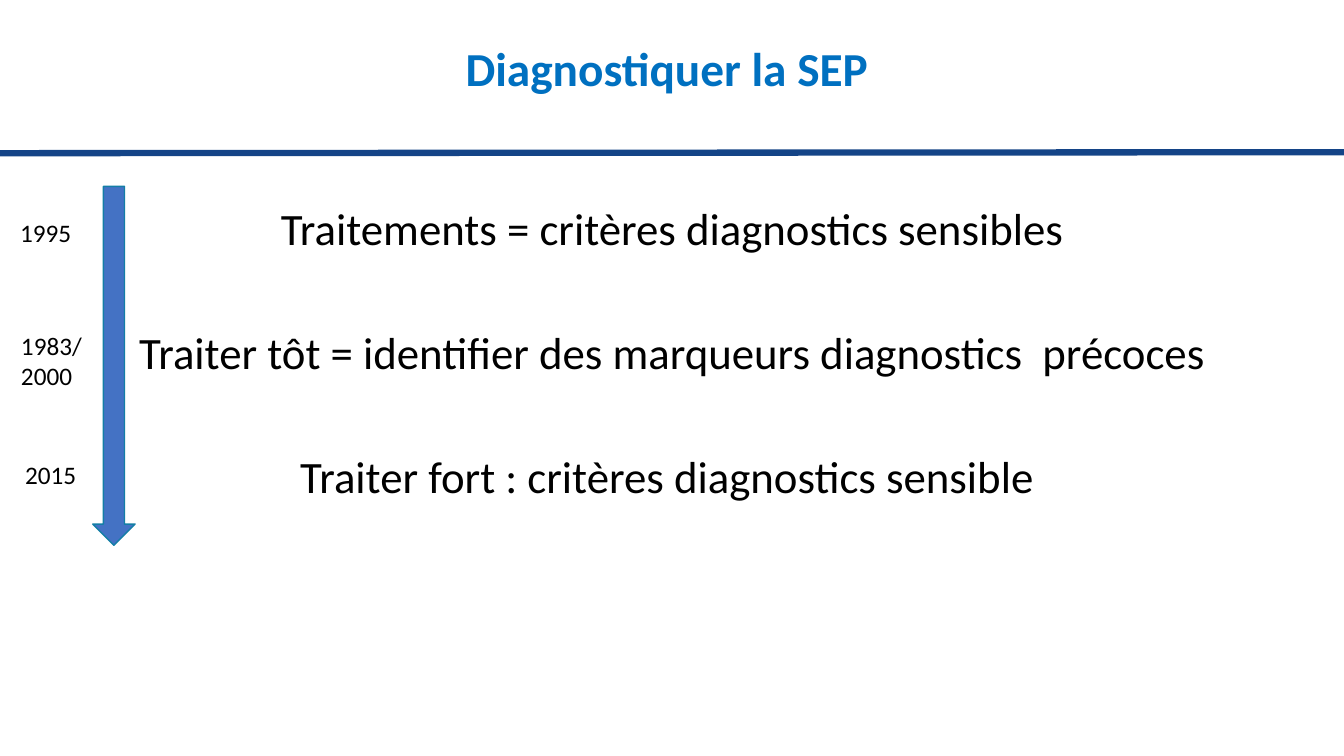
from dataclasses import dataclass

from lxml import etree
from pptx import Presentation
from pptx import util as u
from pptx.dml.color import RGBColor
from pptx.enum import shapes, text
from pptx.oxml import ns


@dataclass(frozen=True)
class Theme:
    """Colours, font and type sizes."""
    font: str = "Calibri"
    title: str = "0070C0"
    ink: str = "000000"
    arrow: str = "4472C4"
    edge: str = "147EA6"
    rule: str = "144487"
    head: float = 33.8
    body: float = 32
    small: float = 18


@dataclass(frozen=True)
class Box:
    """Text block with its place in inches and its style."""
    lines: tuple[str, ...]
    left: float
    top: float
    width: float
    height: float
    size: float
    color: str
    bold: bool = False
    wrap: bool = True
    gap: float = 0
    foot: float = 0.05
    mid: bool = False


THEME = Theme()
TITLE = Box(("Diagnostiquer la SEP ",), 0.92, 0.24, 11.5, 1.45,
            THEME.head, THEME.title, bold=True, foot=0.57, mid=True)
BODY = Box(("Traitements = critères diagnostics sensibles",
            "Traiter tôt = identifier des marqueurs diagnostics  précoces",
            "Traiter fort : critères diagnostics sensible "),
           0.92, 2, 11.5, 4.76, THEME.body, THEME.ink, gap=54)
YEARS = [
    Box(lines, left, top, width, height, THEME.small, THEME.ink, wrap=False)
    for lines, left, top, width, height in (
        (("1995",), 0.1, 2.11, 0.71, 0.4),
        (("1983/", "2000"), 0.11, 3.23, 0.81, 0.71),
        (("2015",), 0.15, 4.51, 0.71, 0.4),
    )
]


def rgb(code: str) -> RGBColor:
    """Turn a hex code into a colour."""
    return RGBColor.from_string(code)


def write(slide, box: Box) -> None:
    """Draw one text block."""
    frame = slide.shapes.add_textbox(
        *map(u.Inches, (box.left, box.top, box.width, box.height))).text_frame
    frame.word_wrap = box.wrap
    frame.margin_bottom = u.Inches(box.foot)
    frame.vertical_anchor = (text.MSO_ANCHOR.MIDDLE if box.mid
                             else text.MSO_ANCHOR.TOP)
    if not box.wrap:
        frame.auto_size = text.MSO_AUTO_SIZE.SHAPE_TO_FIT_TEXT
    for rank, line in enumerate(box.lines):
        para = frame.add_paragraph() if rank else frame.paragraphs[0]
        para.text = line
        if box.wrap:
            para.alignment = text.PP_ALIGN.CENTER
            para.line_spacing = 0.9
        if rank and box.gap:
            para.space_before = u.Pt(box.gap)
        para.font.name = THEME.font
        para.font.size = u.Pt(box.size)
        para.font.bold = box.bold
        para.font.color.rgb = rgb(box.color)


def arrow(slide) -> None:
    """Draw the time arrow."""
    shape = slide.shapes.add_shape(
        shapes.MSO_SHAPE.DOWN_ARROW,
        *map(u.Inches, (0.92, 1.85, 0.42, 3.56)))
    shape.shadow.inherit = False
    shape.fill.solid()
    shape.fill.fore_color.rgb = rgb(THEME.arrow)
    shape.line.color.rgb = rgb(THEME.edge)
    shape.line.width = u.Pt(1)


def rule(slide) -> None:
    """Draw the line under the title."""
    line = slide.shapes.add_connector(
        shapes.MSO_CONNECTOR.STRAIGHT,
        *map(u.Inches, (0, 1.52, 13.33, 1.51)))
    line.line.color.rgb = rgb(THEME.rule)
    line.line.width = u.Pt(4.5)
    etree.SubElement(line._element.spPr, ns.qn("a:effectLst"))


def main() -> None:
    """Build and save the slide."""
    deck = Presentation()
    deck.slide_width = u.Inches(13.33)
    deck.slide_height = u.Inches(7.5)
    slide = deck.slides.add_slide(deck.slide_layouts[6])
    write(slide, TITLE)
    write(slide, BODY)
    arrow(slide)
    for year in YEARS:
        write(slide, year)
    rule(slide)
    deck.save("out.pptx")


if __name__ == "__main__":
    main()
